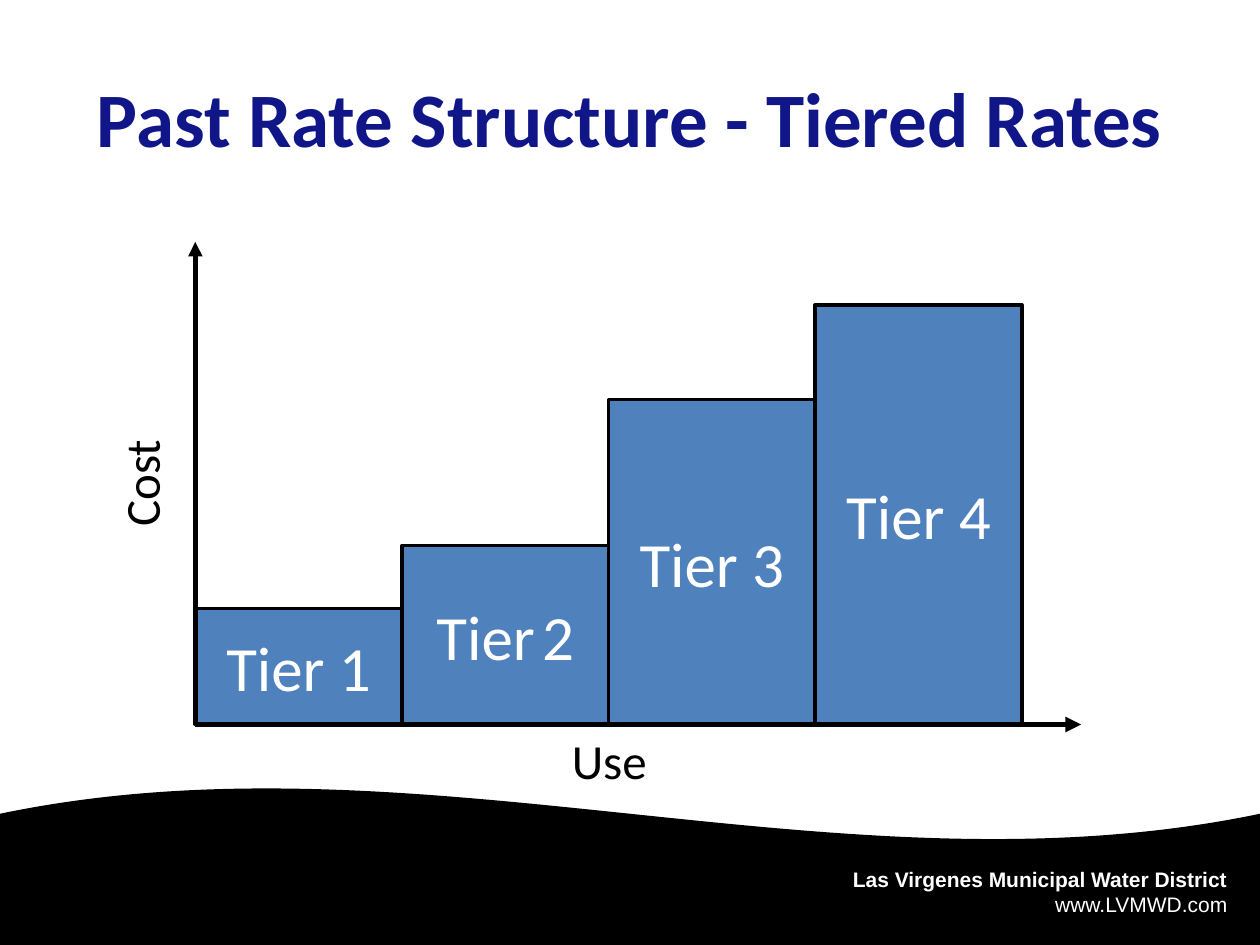
from pptx import Presentation
from pptx.dml.color import RGBColor
from pptx.enum.shapes import MSO_CONNECTOR, MSO_SHAPE
from pptx.enum.text import MSO_ANCHOR, PP_ALIGN
from pptx.oxml.ns import qn
from pptx.util import Inches, Pt
from lxml.etree import SubElement

COLORS = {"black": "000000", "white": "FFFFFF", "title": "101688", "bar": "4F81BD"}


def rgb(name):
    return RGBColor.from_string(COLORS[name])


def style_text(p, size, color, font="Calibri", bold=False, align=PP_ALIGN.CENTER):
    p.alignment = align
    for r in p.runs:
        r.font.name = font
        r.font.size = Pt(size)
        r.font.bold = bold
        r.font.color.rgb = rgb(color)


prs = Presentation()
prs.slide_width, prs.slide_height = Inches(10), Inches(7.5)
s = prs.slides.add_slide(prs.slide_layouts[5])

# Footer wave and district name
wave = s.shapes.add_shape(MSO_SHAPE.WAVE, Inches(0), Inches(6.25), Inches(10), Inches(1.67))
wave.shadow.inherit = False
wave.fill.solid()
wave.fill.fore_color.rgb = rgb("black")
wave.line.fill.background()

tf = s.shapes.add_textbox(Inches(6.42), Inches(6.83), Inches(3.42), Inches(0.51)).text_frame
tf.word_wrap = True
tf.text = "Las Virgenes Municipal Water District\nwww.LVMWD.com"
for p, bold in zip(tf.paragraphs, (True, False)):
    style_text(p, 12, "white", "Arial", bold, PP_ALIGN.RIGHT)

# Title
title = s.shapes.title
title.left, title.top, title.width, title.height = Inches(0.5), Inches(0.3), Inches(9), Inches(1.25)
title.text_frame.text = "Past Rate Structure - Tiered Rates"
title.text_frame.vertical_anchor = MSO_ANCHOR.MIDDLE
style_text(title.text_frame.paragraphs[0], 44, "title", bold=True)

# Tier bars standing on the use axis
origin_x, base_y, bar_width = 1.55, 5.75, 1.64
for i, height in enumerate((0.92, 1.42, 2.58, 3.33)):
    bar = s.shapes.add_shape(MSO_SHAPE.RECTANGLE, Inches(origin_x + i * bar_width),
                             Inches(base_y - height), Inches(bar_width), Inches(height))
    bar.shadow.inherit = False
    bar.fill.solid()
    bar.fill.fore_color.rgb = rgb("bar")
    bar.line.color.rgb = rgb("black")
    bar.line.width = Pt(2)
    tf = bar.text_frame
    tf.vertical_anchor = MSO_ANCHOR.MIDDLE
    p = tf.paragraphs[0]
    for part in ("Tier", " ", str(i + 1)):
        p.add_run().text = part
    style_text(p, 36, "white")
    if i == 1:
        p.runs[1].font.size = Pt(18)

# Axes
for end_x, end_y, width in ((origin_x, 1.92, 2.75), (8.58, base_y, 3)):
    axis = s.shapes.add_connector(MSO_CONNECTOR.STRAIGHT, Inches(origin_x), Inches(base_y),
                                  Inches(end_x), Inches(end_y))
    axis.line.color.rgb = rgb("black")
    axis.line.width = Pt(width)
    SubElement(axis.line._get_or_add_ln(), qn("a:tailEnd"), type="triangle")
    SubElement(axis._element.spPr, qn("a:effectLst"))

# Axis labels
for text, left, top, rotation in (("Cost", 0.61, 3.55, 270), ("Use", 4.33, 5.75, 0)):
    label = s.shapes.add_textbox(Inches(left), Inches(top), Inches(1.01), Inches(0.57))
    label.rotation = rotation
    label.text_frame.word_wrap = True
    label.text_frame.text = text
    style_text(label.text_frame.paragraphs[0], 28, "black")

prs.save("out.pptx")
